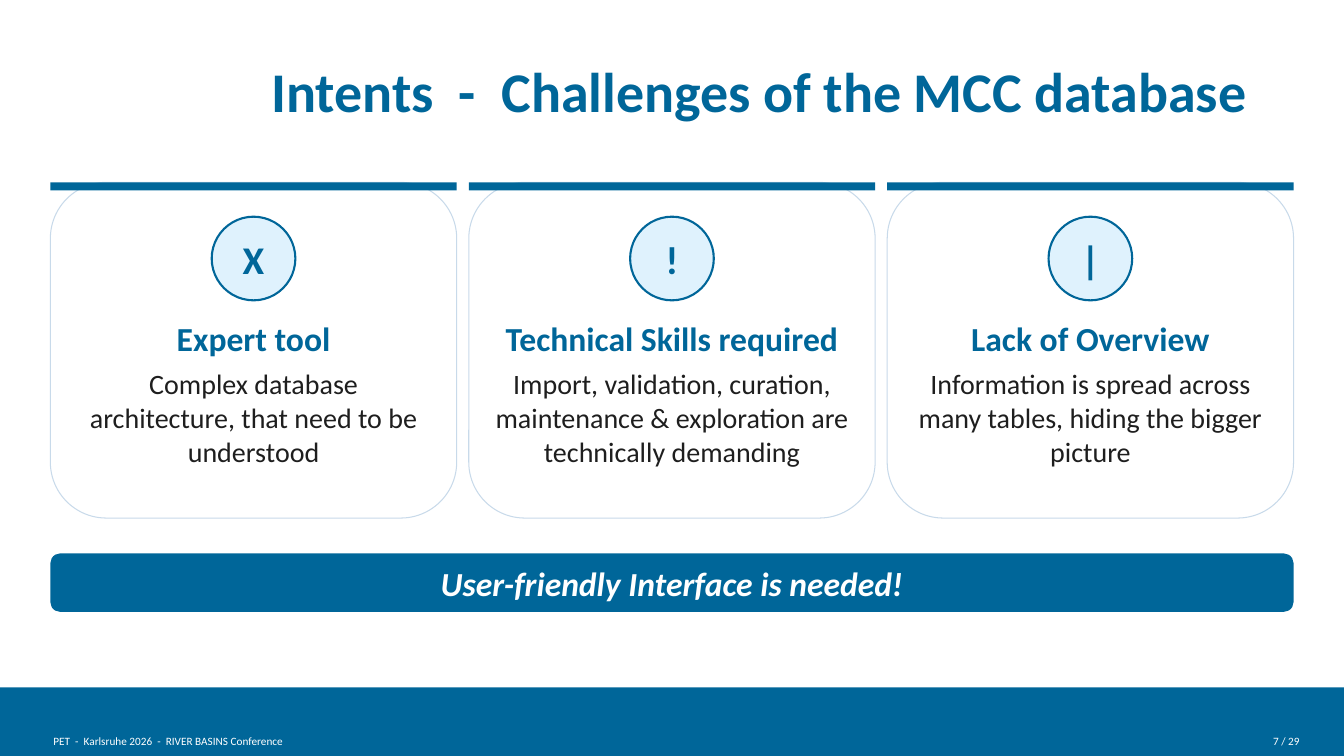
from pptx import Presentation
from pptx.dml.color import RGBColor
from pptx.enum import shapes as sh, text as tx
from pptx.util import Inches, Pt

TITLE = "Intents  -  Challenges of the MCC database"
CHALLENGES = [
    ("X", "Expert tool",
     "Complex database architecture, that need to be understood"),
    ("!", "Technical Skills required",
     "Import, validation, curation, maintenance & exploration are technically demanding"),
    ("|", "Lack of Overview",
     "Information is spread across many tables, hiding the bigger picture"),
]
CONCLUSION = "User-friendly Interface is needed!"
EVENT = "PET  -  Karlsruhe 2026  -  RIVER BASINS Conference"
PAGE = "7 / 29"

COLORS = {"blue": "006699", "pale": "DFF2FD", "border": "C8DAEA",
          "ink": "1E1E1E", "white": "FFFFFF"}
FONT = "Calibri"
LEFT, CARD_TOP = 0.5, 1.81
CONTENT_W, CARD_W, CARD_H = 12.33, 4.03, 3.33
CARD_STEP = (CONTENT_W - CARD_W) / (len(CHALLENGES) - 1)
BADGE = 0.83
BODY_W = 3.58
LEFT_ALIGN, CENTER, RIGHT = (tx.PP_ALIGN.LEFT, tx.PP_ALIGN.CENTER, tx.PP_ALIGN.RIGHT)
MIDDLE, TOP = tx.MSO_ANCHOR.MIDDLE, tx.MSO_ANCHOR.TOP


def color(name):
    return RGBColor.from_string(COLORS[name])


def write(shape, words, size, ink="blue", bold=False, italic=False,
          align=CENTER, anchor=TOP, side=0.03):
    frame = shape.text_frame
    frame.word_wrap = True
    frame.auto_size = tx.MSO_AUTO_SIZE.NONE
    frame.vertical_anchor = anchor
    frame.margin_left = frame.margin_right = Inches(side)
    frame.margin_top = frame.margin_bottom = Inches(0.03)
    paragraph = frame.paragraphs[0]
    paragraph.alignment = align
    run = paragraph.add_run()
    run.text = words
    font = run.font
    font.name, font.size, font.bold, font.italic = FONT, Pt(size), bold, italic
    font.color.rgb = color(ink)


def add_label(slide, box, words, size, **style):
    write(slide.shapes.add_textbox(*map(Inches, box)), words, size, **style)


def add_block(slide, kind, box, fill, line=None, width=0.75):
    block = slide.shapes.add_shape(kind, *map(Inches, box))
    block.shadow.inherit = False
    block.fill.solid()
    block.fill.fore_color.rgb = color(fill)
    if line:
        block.line.color.rgb = color(line)
        block.line.width = Pt(width)
    else:
        block.line.fill.background()
    return block


def add_card(slide, left, symbol, heading, body):
    kinds = sh.MSO_SHAPE
    add_block(slide, kinds.ROUNDED_RECTANGLE, (left, CARD_TOP, CARD_W, CARD_H),
              "white", "border")
    add_block(slide, kinds.RECTANGLE, (left, CARD_TOP, CARD_W, 0.08), "blue")
    badge = add_block(slide, kinds.OVAL,
                      (left + (CARD_W - BADGE) / 2, 2.15, BADGE, BADGE),
                      "pale", "blue", 1.5)
    write(badge, symbol, 28, bold=True, anchor=MIDDLE, side=0.06)
    add_label(slide, (left, 3.12, CARD_W, 0.46), heading, 24, bold=True)
    add_label(slide, (left + (CARD_W - BODY_W) / 2, 3.61, BODY_W, 1.07),
              body, 20, ink="ink")


def main():
    deck = Presentation()
    deck.slide_width, deck.slide_height = Inches(13.33), Inches(7.5)
    slide = deck.slides.add_slide(deck.slide_layouts[5])

    title = slide.shapes.title
    title.left, title.top, title.width, title.height = map(
        Inches, (2.66, 0.53, 10.15, 0.73))
    write(title, TITLE, 40, bold=True, align=LEFT_ALIGN, anchor=MIDDLE)

    add_block(slide, sh.MSO_SHAPE.RECTANGLE, (0, 6.82, 13.33, 0.68), "blue")
    for index, challenge in enumerate(CHALLENGES):
        add_card(slide, LEFT + index * CARD_STEP, *challenge)

    banner = add_block(slide, sh.MSO_SHAPE.ROUNDED_RECTANGLE,
                       (LEFT, 5.49, CONTENT_W, 0.58), "blue")
    write(banner, CONCLUSION, 24, ink="white", bold=True, italic=True,
          anchor=MIDDLE, side=0.06)

    add_label(slide, (LEFT, 7.25, 6.94, 0.19), EVENT, 8, ink="white", align=LEFT_ALIGN)
    add_label(slide, (11.81, 7.25, 1.11, 0.19), PAGE, 8, ink="white", align=RIGHT)
    deck.save("out.pptx")


if __name__ == "__main__":
    main()
